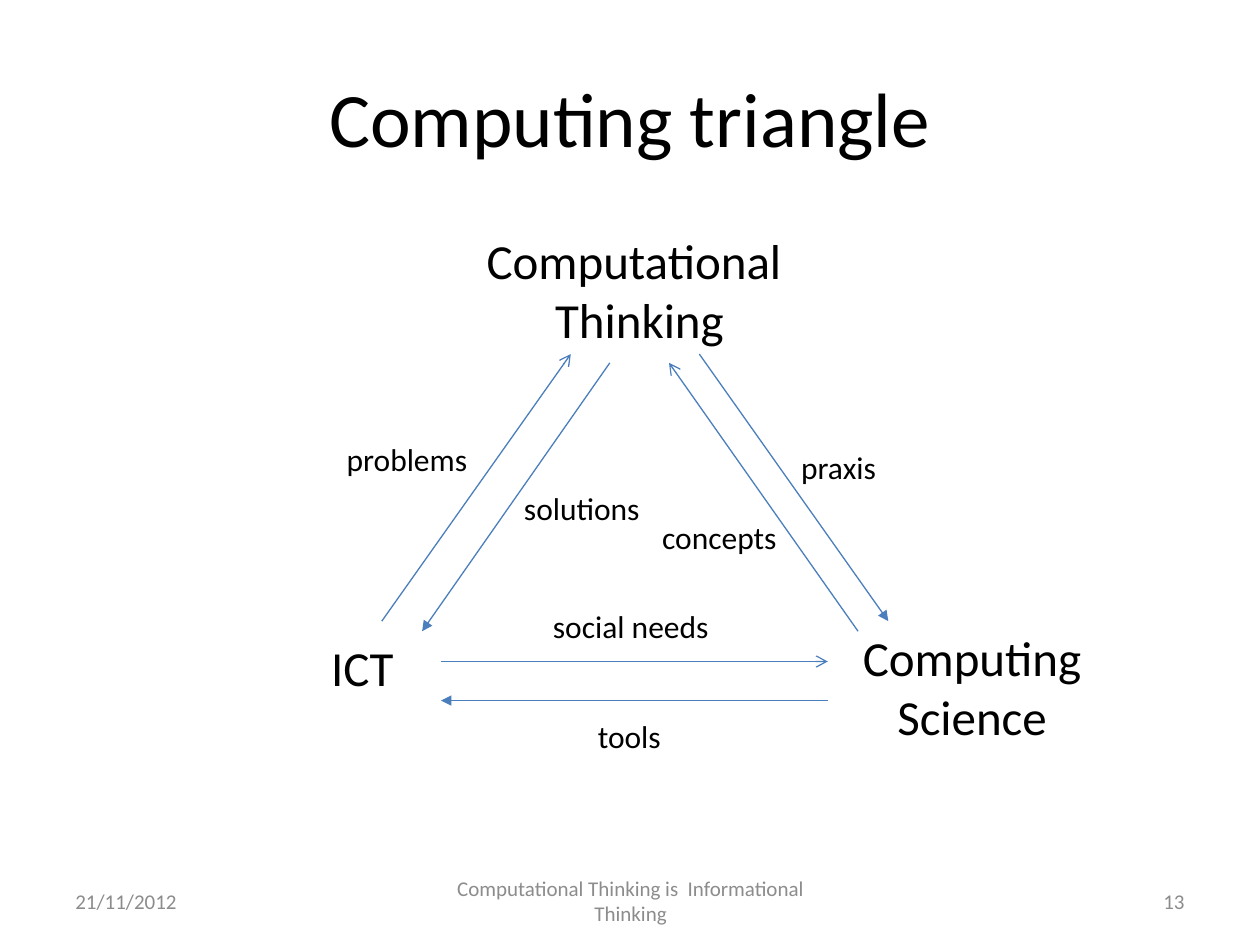
from pptx import Presentation, util as u
from pptx.dml.color import RGBColor
from pptx.enum import shapes, text
from pptx.oxml.ns import qn
from lxml import etree

LEFT, MID, RIGHT = text.PP_ALIGN.LEFT, text.PP_ALIGN.CENTER, text.PP_ALIGN.RIGHT
TOP, CORE = text.MSO_ANCHOR.TOP, text.MSO_ANCHOR.MIDDLE
BLACK, GREY, BLUE = "000000", "8C8C8C", "4B7EBC"

FRAME = [
    ("Computing triangle", (0.5, 0.3, 9, 1.25), 44, BLACK, MID),
    ("21/11/2012", (0.5, 6.95, 2.33, 0.4), 12, GREY, LEFT),
    ("Computational Thinking is  Informational Thinking",
     (3.42, 6.95, 3.17, 0.4), 12, GREY, MID),
    ("13", (7.17, 6.95, 2.33, 0.4), 12, GREY, RIGHT),
]
NODES = [
    ("ICT", (2.48, 5.01, 0.79, 0.57)),
    ("Computing Science", (6.73, 4.93, 1.97, 1.04)),
    ("Computational \nThinking", (3.03, 1.78, 4.09, 1.04)),
]
LABELS = [
    ("social needs", 4.29, 4.77, 1.57, LEFT),
    ("tools", 4.21, 5.64, 1.57, MID),
    ("problems", 2.64, 3.44, 1.18, MID),
    ("solutions", 4.06, 3.83, 1.18, LEFT),
    ("praxis", 6.26, 3.51, 0.94, LEFT),
    ("concepts", 5.08, 4.06, 1.26, MID),
]
OPEN, SOLID = ("tailEnd", "arrow"), ("headEnd", "triangle")
ARROWS = [
    ((3.5, 5.25), (6.57, 5.25), OPEN),
    ((3.35, 5.01), (4.84, 2.88), SOLID),
    ((6.81, 5.01), (5.31, 2.88), OPEN),
    ((7.05, 4.93), (5.55, 2.81), SOLID),
    ((3.03, 4.93), (4.53, 2.81), OPEN),
    ((3.5, 5.56), (6.57, 5.56), SOLID),
]


def color(code):
    """Turn a hex string into a colour."""
    return RGBColor.from_string(code)


def apply(item, values):
    """Set each named value on an item."""
    for name, value in values.items():
        setattr(item, name, value)


def add_text(slide, words, box, size, shade=BLACK, align=MID, anchor=TOP):
    """Add a wrapped text box with one paragraph per line."""
    frame = slide.shapes.add_textbox(*map(u.Inches, box)).text_frame
    apply(frame, {"word_wrap": True, "vertical_anchor": anchor, "text": words})
    for para in frame.paragraphs:
        para.alignment = align
        apply(para.runs[0].font, {"name": "Calibri", "size": u.Pt(size)})
        para.runs[0].font.color.rgb = color(shade)


def add_arrow(slide, start, end, tip):
    """Add a thin line with an arrowhead at one end."""
    ends = map(u.Inches, start + end)
    line = slide.shapes.add_connector(shapes.MSO_CONNECTOR.STRAIGHT, *ends)
    line.line.width = u.Pt(0.75)
    line.line.fill.solid()
    line.line.fill.fore_color.rgb = color(BLUE)
    side, kind = tip
    props = line._element.spPr
    etree.SubElement(props.find(qn("a:ln")), qn("a:" + side), type=kind)
    etree.SubElement(props, qn("a:effectLst"))


def main():
    """Build the slide and save it."""
    deck = Presentation()
    apply(deck, {"slide_width": u.Inches(10), "slide_height": u.Inches(7.5)})
    slide = deck.slides.add_slide(deck.slide_layouts[6])
    for words, box, size, shade, align in FRAME:
        add_text(slide, words, box, size, shade, align, CORE)
    for words, box in NODES:
        add_text(slide, words, box, 28)
    for start, end, tip in ARROWS:
        add_arrow(slide, start, end, tip)
    for words, left, top, width, align in LABELS:
        add_text(slide, words, (left, top, width, 0.4), 18, align=align)
    deck.save("out.pptx")


if __name__ == "__main__":
    main()
